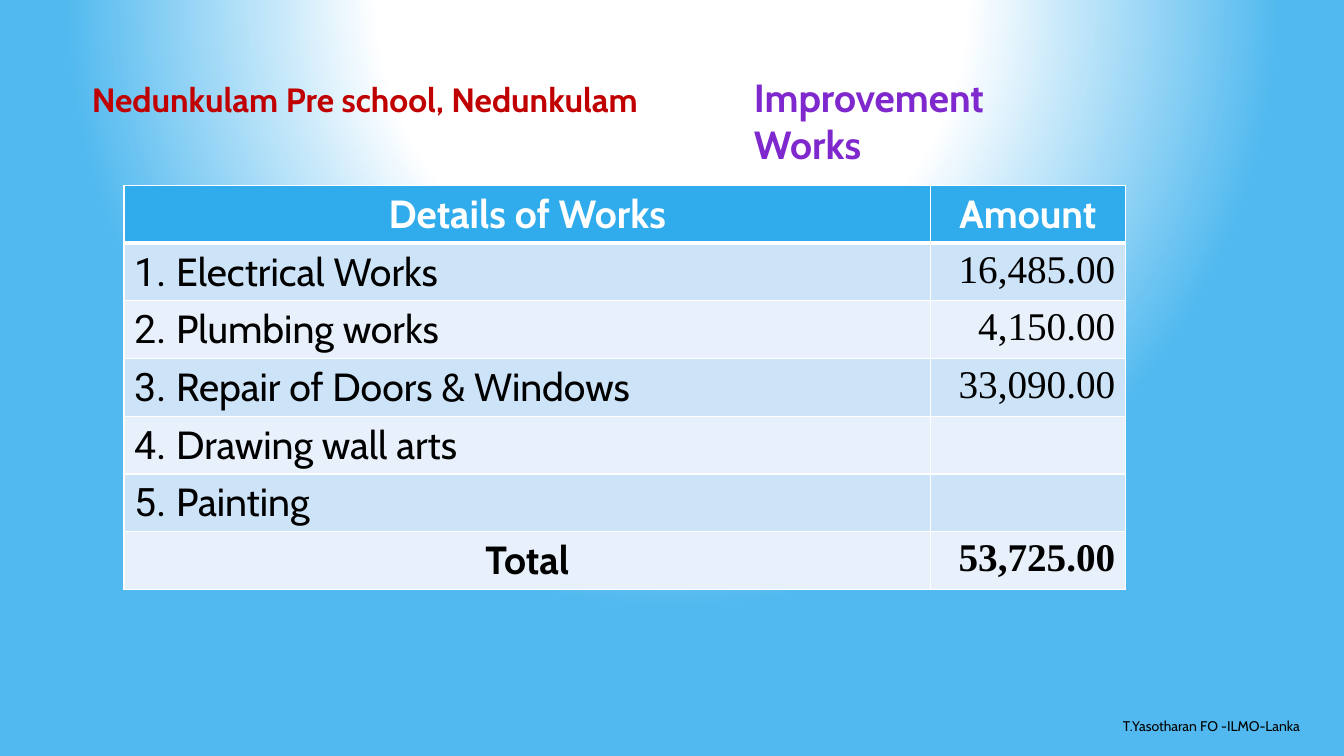
from pptx import Presentation
from pptx.dml.color import RGBColor
from pptx.enum.text import MSO_ANCHOR, MSO_AUTO_SIZE, PP_ALIGN
from pptx.oxml import parse_xml
from pptx.oxml.ns import nsdecls
from pptx.util import Inches, Pt


def rgb(value):
    """Turn a hex string into a colour."""
    return RGBColor.from_string(value)


class Deck:
    """Hold the style, the presentation and the current slide."""

    font, label_font, number_font = "Cabin", "Roboto", "Times New Roman"
    black, white, sky, blue = "000000", "FFFFFF", "51B9EF", "30ACEC"
    red, purple = "C00000", "7E28CD"
    bands = ("CDE3F8", "E8F1FB")

    def __init__(self):
        """Start a wide presentation with one title-only slide."""
        self.prs = Presentation()
        self.prs.slide_width, self.prs.slide_height = Inches(13.33), Inches(7.5)
        self.s = self.prs.slides.add_slide(self.prs.slide_layouts[5])

    def x(self, share):
        """Give a percentage of the slide width."""
        return round(self.prs.slide_width * share / 100)

    def y(self, share):
        """Give a percentage of the slide height."""
        return round(self.prs.slide_height * share / 100)

    def box(self, left, top, width, height):
        """Turn percentages into a position and size."""
        return self.x(left), self.y(top), self.x(width), self.y(height)

    def style(self, r, size, color, bold=False, font=None):
        """Format a run."""
        r.font.name = font or self.font
        r.font.size, r.font.bold = Pt(size), bold
        r.font.color.rgb = rgb(color)

    def background(self):
        """Paint the circular white-to-sky glow."""
        stops = "".join(
            f'<a:gs pos="{pos}000"><a:srgbClr val="{color}">'
            f'<a:alpha val="{alpha}000"/></a:srgbClr></a:gs>'
            for pos, color, alpha in ((5, self.white, 100), (38, self.white, 100),
                                      (79, self.sky, 94)))
        self.s.element.cSld.insert(0, parse_xml(
            f'<p:bg {nsdecls("p", "a")}><p:bgPr><a:gradFill rotWithShape="1">'
            f'<a:gsLst>{stops}</a:gsLst><a:path path="circle">'
            '<a:fillToRect l="50000" t="-80000" r="50000" b="180000"/></a:path>'
            '</a:gradFill><a:effectLst/></p:bgPr></p:bg>'))

    def fill_text(self, sp, text, size, color, bold, anchor):
        """Write one formatted paragraph into a shape."""
        tf = sp.text_frame
        tf.text = text
        tf.word_wrap, tf.auto_size = True, MSO_AUTO_SIZE.NONE
        tf.vertical_anchor = anchor
        p = tf.paragraphs[0]
        p.alignment = PP_ALIGN.LEFT
        self.style(p.runs[0], size, color, bold)

    def title(self, text, box, size, color):
        """Move and format the title placeholder."""
        sp = self.s.shapes.title
        sp.left, sp.top, sp.width, sp.height = self.box(*box)
        self.fill_text(sp, text, size, color, True, MSO_ANCHOR.TOP)

    def text(self, text, box, size, color, bold=False, anchor=MSO_ANCHOR.TOP):
        """Add a text box."""
        sp = self.s.shapes.add_textbox(*self.box(*box))
        self.fill_text(sp, text, size, color, bold, anchor)

    def cell(self, cell, parts, fill, align, bottom=1, color=None, bold=False):
        """Fill, border and write a cell from (text, font) parts."""
        tc_pr = cell._tc.get_or_add_tcPr()
        for side, width in (("L", 1), ("R", 1), ("T", 1), ("B", bottom)):
            tc_pr.append(parse_xml(
                f'<a:ln{side} {nsdecls("a")} w="{Pt(width)}"><a:solidFill>'
                f'<a:srgbClr val="{self.white}"/></a:solidFill></a:ln{side}>'))
        cell.fill.solid()
        cell.fill.fore_color.rgb = rgb(fill)
        p = cell.text_frame.paragraphs[0]
        p.alignment = align
        for text, font in parts:
            r = p.add_run()
            r.text = text
            self.style(r, 28, color or self.black, bold, font)

    def table(self, box, widths, header, works, total):
        """Add the cost table with a header, numbered works and a total."""
        count = len(works) + 2
        table = self.s.shapes.add_table(count, 2, *self.box(*box)).table
        for column, width in zip(table.columns, widths):
            column.width = self.x(width)
        for cell, text in zip(table.rows[0].cells, header):
            self.cell(cell, [(text, self.font)], self.blue, PP_ALIGN.CENTER,
                      3, self.white, True)
        for i, (work, amount) in enumerate([*works, total], 1):
            last = i == count - 1
            name, value = table.rows[i].cells
            fill = self.bands[(i - 1) % 2]
            label = [] if last else [(f"{i}. ", self.label_font)]
            self.cell(name, label + [(work, self.font)], fill,
                      PP_ALIGN.CENTER if last else PP_ALIGN.LEFT, bold=last)
            self.cell(value, [(amount, self.number_font)] if amount else [], fill,
                      PP_ALIGN.RIGHT, bold=last)


def main():
    """Build and save the slide."""
    d = Deck()
    d.background()
    d.title("Nedunkulam Pre school, Nedunkulam", (6.08, 9.73, 42.8, 6.67), 24, d.red)
    d.text("Improvement Works", (55.36, 9.07, 26.2, 7.6), 28, d.purple, True)
    d.table((9.23, 24.53, 74.5, 53), (60, 14.5), ("Details of Works", "Amount"),
            [("Electrical Works", "16,485.00"),
             ("Plumbing works", "4,150.00"),
             ("Repair of Doors & Windows", "33,090.00"),
             ("Drawing wall arts", ""),
             ("Painting", "")],
            ("Total", "53,725.00"))
    d.text("T.Yasotharan FO -ILMO-Lanka", (82.82, 93.33, 16.28, 5.33), 10, d.black,
           anchor=MSO_ANCHOR.MIDDLE)
    d.prs.save("out.pptx")


if __name__ == "__main__":
    main()
